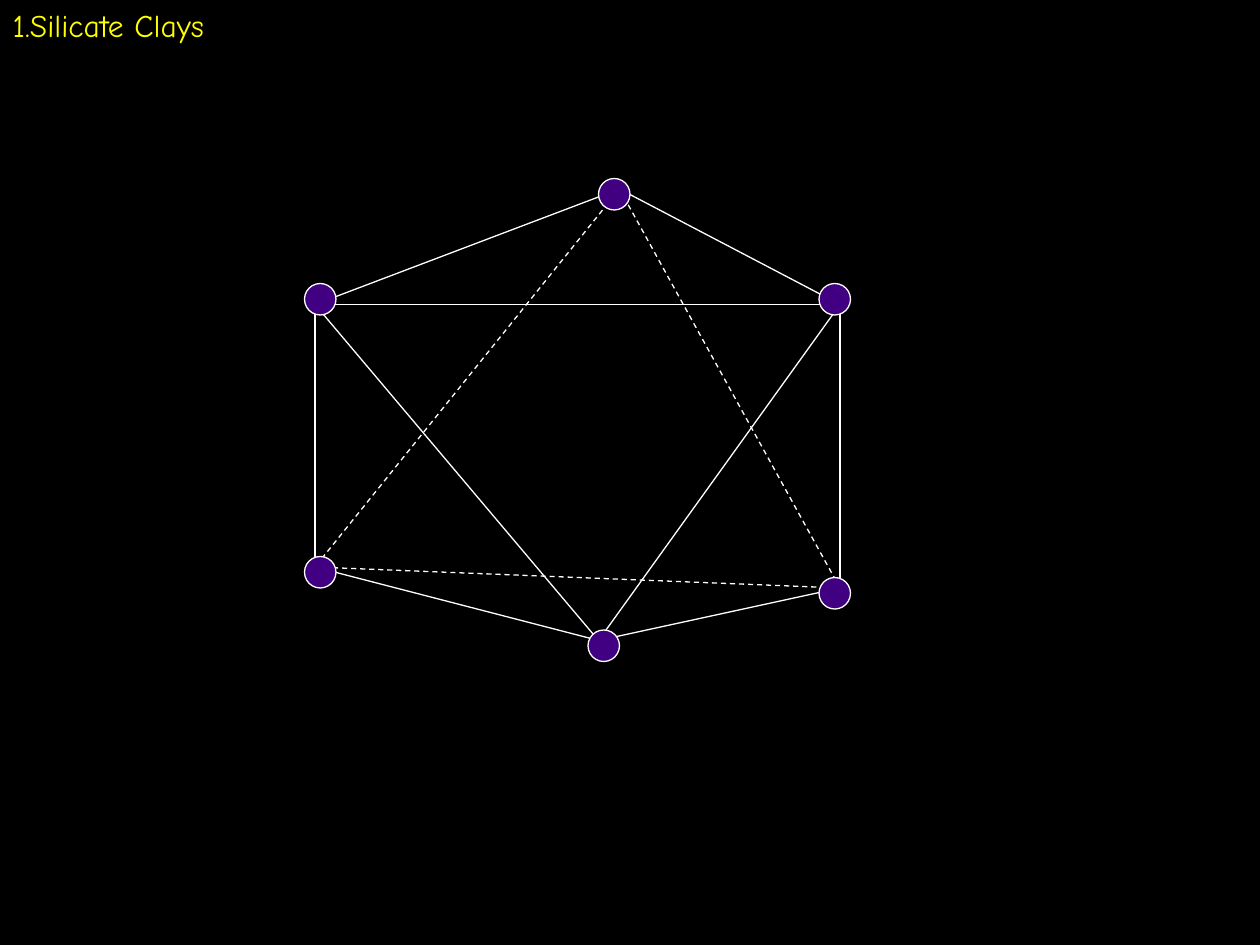
from collections import namedtuple
from pptx import Presentation, util as u
from pptx.dml.color import RGBColor
from pptx.enum import dml, shapes, text
from pptx.oxml.ns import qn
from lxml import etree

Box = namedtuple("Box", "left top width height")
STEP = u.Inches(1) / 12
NODE_SIZE = 3
BLACK, WHITE, PURPLE, YELLOW = "000000", "FFFFFF", "410082", "FFFF00"

CORNERS = {
    "top": (30, 1),
    "upper left": (1, 12),
    "upper right": (51, 12),
    "bottom": (28, 44),
    "lower right": (51, 39),
    "lower left": (1, 37),
}
NODES = [(28, 0), (0, 10), (49, 10), (27, 43), (49, 38), (0, 36)]
FRONT_EDGES = [
    ("upper left", "upper right"),
    ("upper left", "top"),
    ("upper right", "top"),
    ("upper left", "bottom"),
    ("upper right", "bottom"),
    ("upper left", "lower left"),
    ("upper right", "lower right"),
    ("lower left", "bottom"),
    ("lower right", "bottom"),
]
BACK_EDGES = [
    ("top", "lower left"),
    ("top", "lower right"),
    ("lower left", "lower right"),
]


def colour(value):
    return RGBColor.from_string(value)


def set_all(target, values):
    for name, value in values.items():
        setattr(target, name, value)


def paint(fill, value):
    fill.solid()
    fill.fore_color.rgb = colour(value)


def place(box, column, row):
    return (round((box.left + column) * STEP),
            round((box.top + row) * STEP))


def outline(line):
    paint(line.fill, WHITE)
    line.width = u.Pt(0.75)


def add_title(page, box):
    title = page.shapes.title
    set_all(title, {name: round(value * STEP)
                    for name, value in box._asdict().items()})
    frame = title.text_frame
    set_all(frame, {
        "word_wrap": False,
        "auto_size": text.MSO_AUTO_SIZE.SHAPE_TO_FIT_TEXT,
        "vertical_anchor": text.MSO_ANCHOR.TOP,
    })
    para = frame.paragraphs[0]
    set_all(para, {"alignment": text.PP_ALIGN.LEFT, "line_spacing": 1.0})
    span = para.add_run()
    span.text = "1.Silicate Clays"
    set_all(span.font, {"name": "Comic Neue", "size": u.Pt(18)})
    span.font.color.rgb = colour(YELLOW)


def add_edge(page, box, start, end, dashed):
    edge = page.shapes.add_connector(
        shapes.MSO_CONNECTOR.STRAIGHT,
        *place(box, *CORNERS[start]), *place(box, *CORNERS[end]))
    outline(edge.line)
    if dashed:
        edge.line.dash_style = dml.MSO_LINE.DASH
    etree.SubElement(edge._element.spPr, qn("a:effectLst"))


def add_node(page, box, column, row):
    size = round(NODE_SIZE * STEP)
    node = page.shapes.add_shape(
        shapes.MSO_SHAPE.OVAL, *place(box, column, row), size, size)
    node.shadow.inherit = False
    paint(node.fill, PURPLE)
    outline(node.line)


def add_octahedron(page, box):
    for edges, dashed in ((FRONT_EDGES, False), (BACK_EDGES, True)):
        for start, end in edges:
            add_edge(page, box, start, end, dashed)
    for column, row in NODES:
        add_node(page, box, column, row)


def main():
    deck = Presentation()
    set_all(deck, {"slide_width": u.Inches(10), "slide_height": u.Inches(7.5)})
    page = deck.slides.add_slide(deck.slide_layouts[5])
    paint(page.background.fill, BLACK)
    add_octahedron(page, Box(29, 17, 52, 46))
    add_title(page, Box(0, 0, 23.28, 4.8))
    deck.save("out.pptx")


if __name__ == "__main__":
    main()
